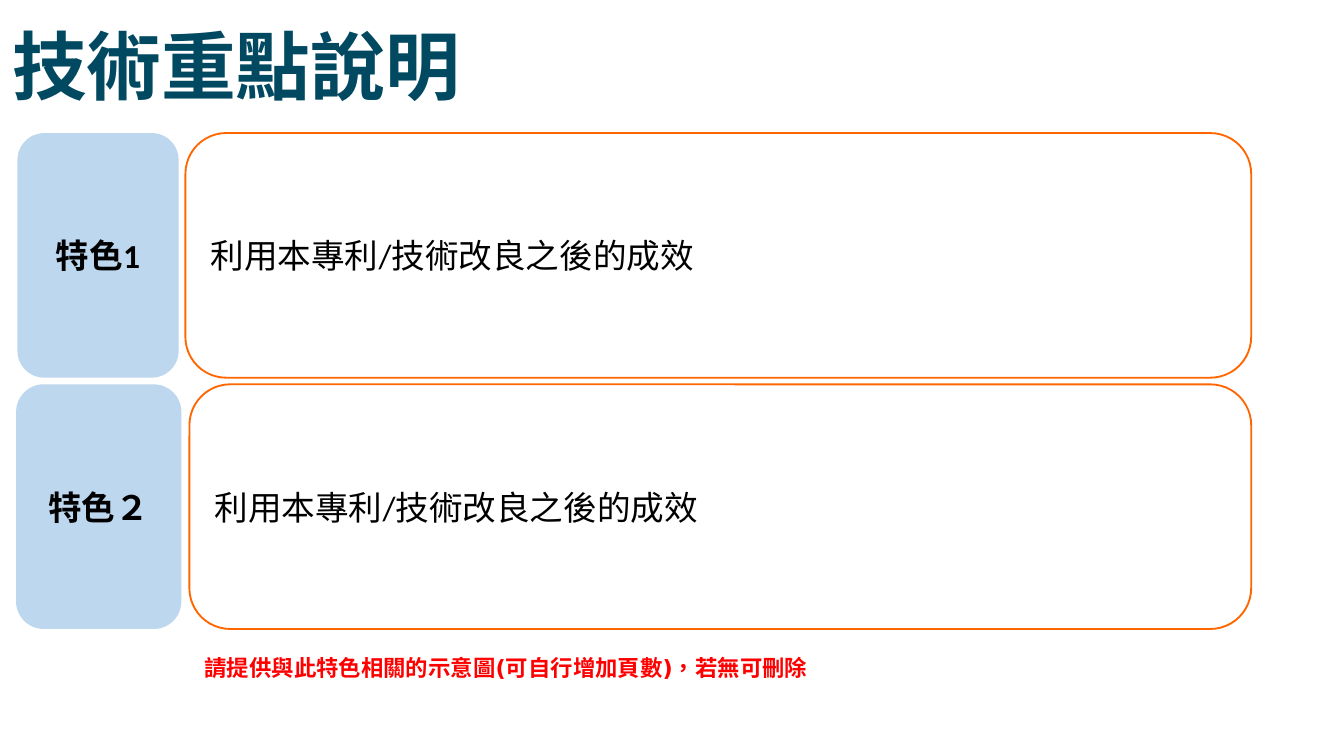
from pptx import Presentation
from pptx.dml.color import RGBColor as RGB
from pptx.enum.lang import MSO_LANGUAGE_ID as Lang
from pptx.enum.shapes import MSO_SHAPE as Shape
from pptx.enum.text import MSO_ANCHOR as Anchor, PP_ALIGN as Align
from pptx.util import Inches, Pt

# Content
TITLE = "技術重點說明"
ROWS = [  # label, text, label left and width, text left
    ("特色1", "利用本專利/技術改良之後的成效", 0.13, 1.2, 1.38),
    ("特色２", "利用本專利/技術改良之後的成效", 0.12, 1.23, 1.41),
]
NOTE = "請提供與此特色相關的示意圖(可自行增加頁數)，若無可刪除"

# Theme: colours, fonts, type sizes
THEME = {
    "title": ("Calibri", 40, "004961", True),
    "label": ("Calibri", 18, "000000", True),
    "body": ("Calibri", 18, "000000", False),
    "note": ("DejaVu Sans", 12, "FF0000", True),
    "tint": "BDD7EE",
    "paper": "FFFFFF",
    "edge": "FF6600",
}

# Row grid
TOP, HIGH, STEP, RIGHT = 0.99, 1.82, 1.87, 9.31


def write(shape, text, style, align=Align.LEFT, anchor=Anchor.MIDDLE, wrap=True):
    frame = shape.text_frame
    frame.word_wrap = wrap
    frame.vertical_anchor = anchor
    para = frame.paragraphs[0]
    para.text = text
    para.alignment = align
    font = para.font
    name, size, color, bold = THEME[style]
    font.name, font.size, font.bold = name, Pt(size), bold
    font.color.rgb = RGB.from_string(color)
    font.language_id = Lang.TRADITIONAL_CHINESE
    return frame


def card(slide, box, fill, edge=None):
    shape = slide.shapes.add_shape(Shape.ROUNDED_RECTANGLE, *map(Inches, box))
    shape.shadow.inherit = False
    shape.fill.solid()
    shape.fill.fore_color.rgb = RGB.from_string(THEME[fill])
    if edge:
        shape.line.color.rgb = RGB.from_string(THEME[edge])
        shape.line.width = Pt(1)
    else:
        shape.line.fill.background()
    return shape


def label(slide, box):
    return slide.shapes.add_textbox(*map(Inches, box))


def main():
    # Wide 16:9 page
    deck = Presentation()
    deck.slide_width = Inches(10)
    deck.slide_height = Inches(10) * 9 // 16
    slide = deck.slides.add_slide(deck.slide_layouts[6])

    # Title
    frame = write(label(slide, (0, 0.13, 8.62, 0.79)), TITLE, "title")
    frame.margin_left = frame.margin_right = Inches(0.09)
    frame.margin_top = frame.margin_bottom = Inches(0.04)
    frame.paragraphs[0].line_spacing = 0.9

    # Feature rows
    for i, (name, text, left, width, start) in enumerate(ROWS):
        top = TOP + i * STEP
        tag = card(slide, (left, top, width, HIGH), "tint")
        write(tag, name, "label", Align.CENTER)
        panel = card(slide, (start, top, RIGHT - start, HIGH), "paper", "edge")
        write(panel, text, "body")

    # Note
    write(label(slide, (1.3, 4.82, 4.93, 0.3)), NOTE, "note",
          Align.CENTER, Anchor.TOP, False)

    deck.save("out.pptx")


if __name__ == "__main__":
    main()
